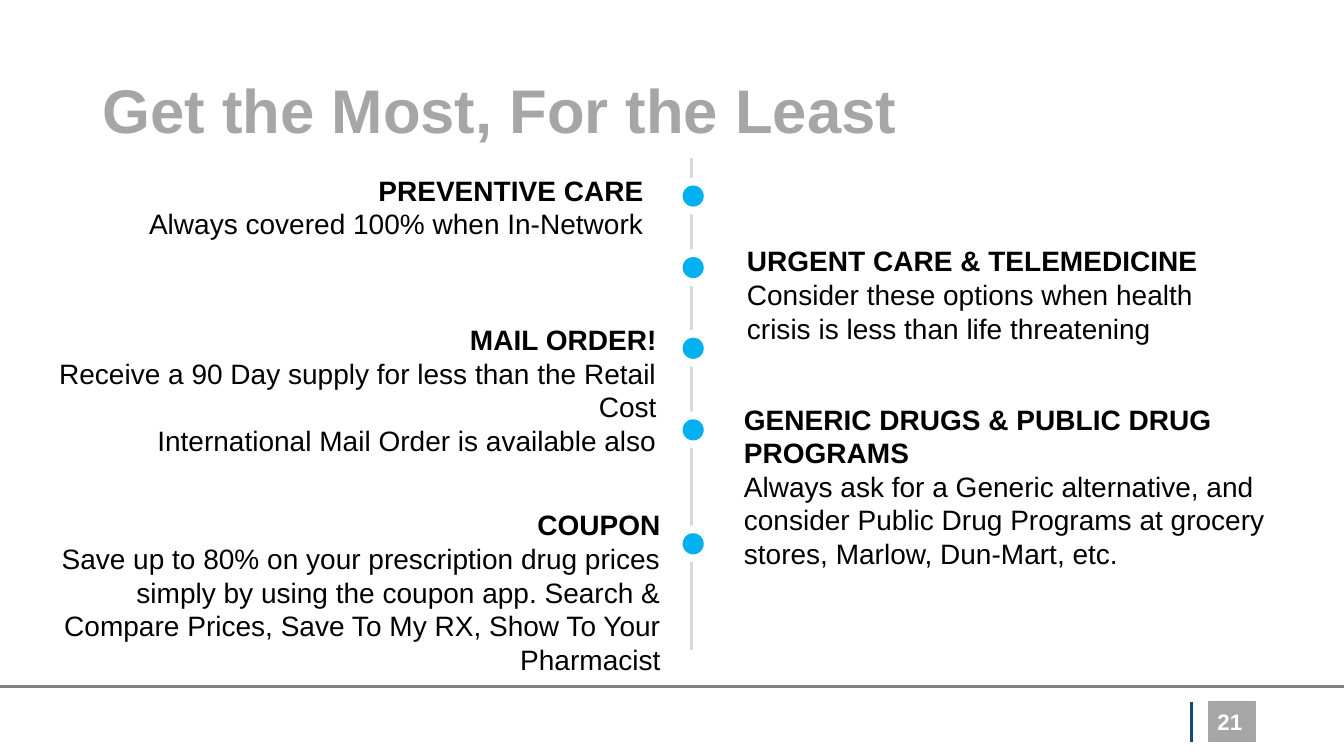
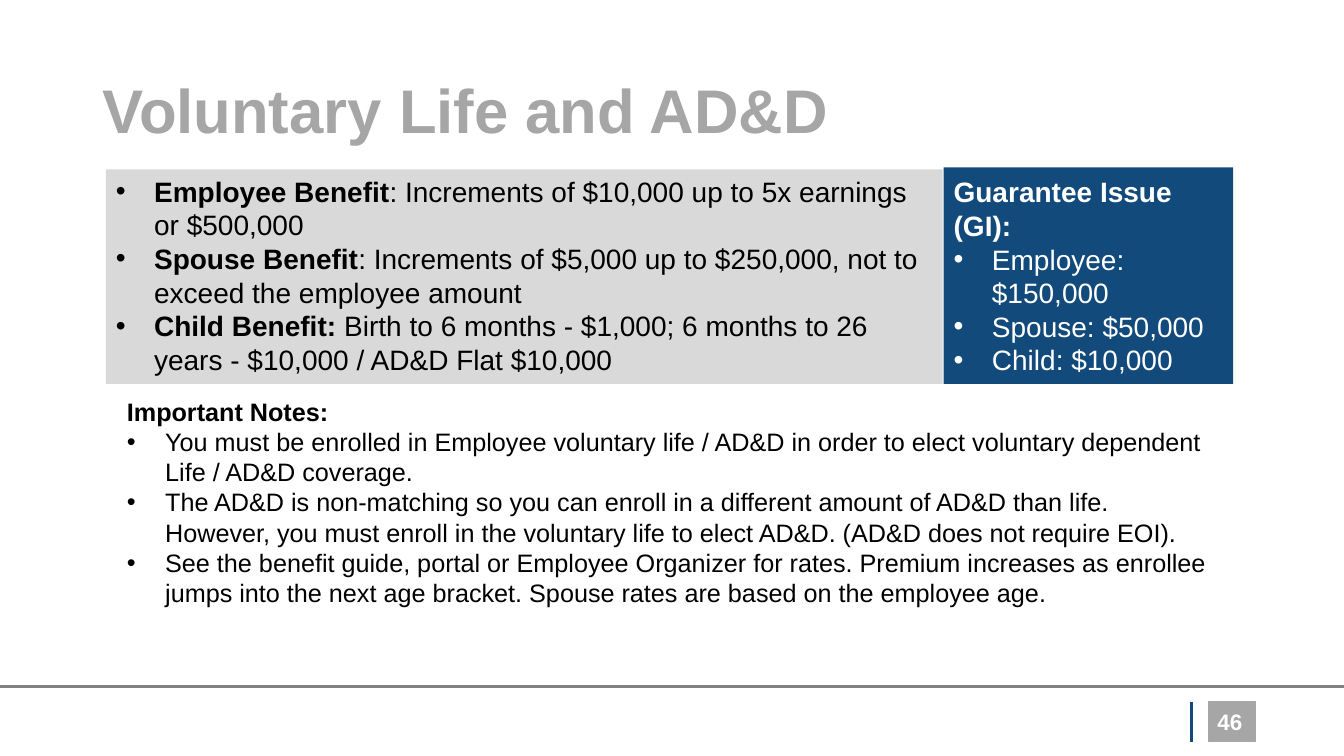
from dataclasses import dataclass

from lxml.etree import SubElement
from pptx import Presentation
from pptx.dml.color import RGBColor
from pptx.enum.shapes import MSO_CONNECTOR, MSO_SHAPE
from pptx.enum.text import MSO_ANCHOR, PP_ALIGN
from pptx.oxml.ns import qn
from pptx.util import Inches, Pt


@dataclass(frozen=True)
class Theme:
    font: str = "Arial"
    ink: str = "000000"
    white: str = "FFFFFF"
    gray: str = "A6A6A6"
    rule: str = "808080"
    pale: str = "D9D9D9"
    navy: str = "124A7B"
    sky: str = "00B0F0"
    title: int = 44
    body: int = 20
    notes: int = 18
    number: int = 16


THEME = Theme()
SLIDE_WIDTH, SLIDE_HEIGHT = 13.33, 7.5
INDENT = 0.38
DOT = 0.21


def rgb(color):
    return RGBColor.from_string(color)


def add_line(slide, start, end, color, width):
    line = slide.shapes.add_connector(
        MSO_CONNECTOR.STRAIGHT, *(Inches(v) for v in (*start, *end)))
    line.line.color.rgb = rgb(color)
    line.line.width = Pt(width)
    SubElement(line._element.spPr, qn("a:effectLst"))


def add_panel(slide, box, fill, geometry=MSO_SHAPE.RECTANGLE, outline=None):
    panel = slide.shapes.add_shape(geometry, *(Inches(v) for v in box))
    panel.shadow.inherit = False
    panel.fill.solid()
    panel.fill.fore_color.rgb = rgb(fill)
    if outline:
        panel.line.color.rgb = rgb(outline)
        panel.line.width = Pt(1)
    else:
        panel.line.fill.background()
    return panel


def add_bullet(paragraph):
    properties = paragraph._p.get_or_add_pPr()
    properties.set("marL", str(Inches(INDENT)))
    properties.set("indent", str(-Inches(INDENT)))
    SubElement(properties, qn("a:buFont")).set("typeface", THEME.font)
    SubElement(properties, qn("a:buChar")).set("char", "•")


def write(shape, paragraphs, size=THEME.body, color=THEME.ink,
          align=PP_ALIGN.LEFT, anchor=MSO_ANCHOR.TOP, spacing=None):
    frame = shape.text_frame
    frame.word_wrap = True
    frame.vertical_anchor = anchor
    for index, (bulleted, runs) in enumerate(paragraphs):
        paragraph = frame.add_paragraph() if index else frame.paragraphs[0]
        if bulleted:
            add_bullet(paragraph)
        paragraph.alignment = align
        if spacing:
            paragraph.line_spacing = spacing
        for text, bold in runs:
            run = paragraph.add_run()
            run.text = text
            run.font.name = THEME.font
            run.font.size = Pt(size)
            run.font.bold = bold
            run.font.color.rgb = rgb(color)


def add_text(slide, box, paragraphs, **style):
    write(slide.shapes.add_textbox(*(Inches(v) for v in box)), paragraphs, **style)


def heading(text):
    return False, [(text, True)]


def plain(text):
    return False, [(text, False)]


def bullet(text, lead=None):
    return True, ([(lead, True)] if lead else []) + [(text, False)]


def add_footer(slide, top, number):
    height = 0.4
    add_panel(slide, (11.99, top, 0.46, height), THEME.gray, outline=THEME.gray)
    add_line(slide, (11.82, top), (11.82, top + height), THEME.navy, 2)
    add_line(slide, (0, top - 0.15), (SLIDE_WIDTH, top - 0.15), THEME.rule, 2.25)
    add_text(slide, (9.42, top, 3, height), [heading(number)], size=THEME.number,
             color=THEME.white, align=PP_ALIGN.RIGHT, anchor=MSO_ANCHOR.MIDDLE)


def start_slide(deck, title, number):
    slide = deck.slides.add_slide(deck.slide_layouts[6])
    add_footer(slide, 6.96, number)
    add_text(slide, (0.92, 0.4, 11.5, 1.45), [heading(title)], size=THEME.title,
             color=THEME.gray, anchor=MSO_ANCHOR.MIDDLE, spacing=0.9)
    return slide


def add_milestone(slide, left, top):
    dot = add_panel(slide, (left, top, DOT, DOT), THEME.sky, MSO_SHAPE.OVAL)
    effects = dot._element.spPr.find(qn("a:effectLst"))
    halo = SubElement(effects, qn("a:outerShdw"))
    for key, value in {"sx": "175000", "sy": "175000",
                       "algn": "ctr", "rotWithShape": "0"}.items():
        halo.set(key, value)
    SubElement(halo, qn("a:srgbClr")).set("val", THEME.white)


def add_timeline(slide, left, top, height, milestones):
    add_line(slide, (left, top), (left, top + height), THEME.pale, 1.75)
    for offset in milestones:
        add_milestone(slide, left - 0.09, top + offset)


def build_savings(deck):
    slide = start_slide(deck, "Get the Most, For the Least", "21")
    add_timeline(slide, 6.86, 1.57, 4.88, (0.27, 0.98, 1.78, 2.59, 3.72))
    left_tips = [
        ((0.53, 1.67, 5.95, 0.77), "PREVENTIVE CARE",
         ["Always covered 100% when In-Network"]),
        ((0.25, 3.15, 6.36, 1.11), "MAIL ORDER!",
         ["Receive a 90 Day supply for less than the Retail Cost",
          "International Mail Order is available also"]),
        ((0.29, 4.99, 6.36, 1.45), "COUPON",
         ["Save up to 80% on your prescription drug prices simply by using the "
          "coupon app. Search & Compare Prices, Save To My RX, Show To Your "
          "Pharmacist"]),
    ]
    right_tips = [
        ((7.31, 2.37, 5.33, 1.11), "URGENT CARE & TELEMEDICINE",
         ["Consider these options when health crisis is less than life threatening"]),
        ((7.28, 3.94, 5.87, 1.45), "GENERIC DRUGS & PUBLIC DRUG PROGRAMS",
         ["Always ask for a Generic alternative, and consider Public Drug Programs "
          "at grocery stores, Marlow, Dun-Mart, etc."]),
    ]
    for tips, align in ((left_tips, PP_ALIGN.RIGHT), (right_tips, PP_ALIGN.LEFT)):
        for box, name, advice in tips:
            add_text(slide, box, [heading(name), *map(plain, advice)], align=align)


def add_benefits(slide, box):
    write(add_panel(slide, box, THEME.pale), [
        bullet(": Increments of $10,000 up to 5x earnings or $500,000",
               "Employee Benefit"),
        bullet(": Increments of $5,000 up to $250,000, not to exceed the employee "
               "amount", "Spouse Benefit"),
        bullet("Birth to 6 months - $1,000; 6 months to 26 years - $10,000 / AD&D "
               "Flat $10,000", "Child Benefit: "),
    ])


def add_guarantee(slide, box):
    write(add_panel(slide, box, THEME.navy), [
        heading("Guarantee Issue (GI):"),
        bullet("Employee: $150,000"),
        bullet("Spouse: $50,000"),
        bullet("Child: $10,000"),
    ], color=THEME.white, anchor=MSO_ANCHOR.MIDDLE)


def add_notes(slide, box):
    add_text(slide, box, [
        heading("Important Notes:"),
        bullet("You must be enrolled in Employee voluntary life / AD&D in order to "
               "elect voluntary dependent Life / AD&D coverage."),
        bullet("The AD&D is non-matching so you can enroll in a different amount of "
               "AD&D than life. However, you must enroll in the voluntary life to "
               "elect AD&D. (AD&D does not require EOI)."),
        bullet("See the benefit guide, portal or Employee Organizer for rates. "
               "Premium increases as enrollee jumps into the next age bracket. "
               "Spouse rates are based on the employee age."),
    ], size=THEME.notes)


def build_voluntary_life(deck):
    slide = start_slide(deck, "Voluntary Life and AD&D", "46")
    add_benefits(slide, (1.05, 1.68, 8.3, 2.13))
    add_guarantee(slide, (9.36, 1.66, 2.87, 2.15))
    add_notes(slide, (1.16, 3.88, 11.01, 2.22))


def main():
    deck = Presentation()
    deck.slide_width = Inches(SLIDE_WIDTH)
    deck.slide_height = Inches(SLIDE_HEIGHT)
    build_savings(deck)
    build_voluntary_life(deck)
    deck.save("out.pptx")


if __name__ == "__main__":
    main()
